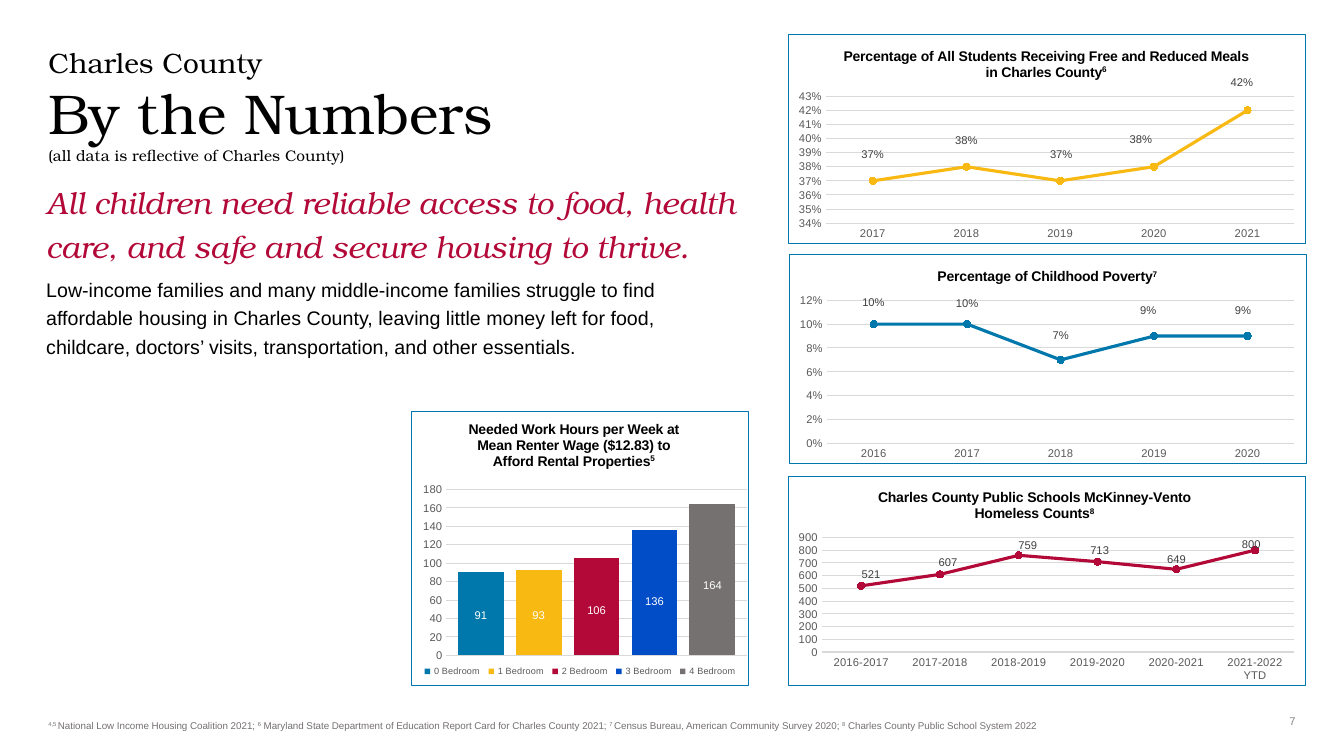
from dataclasses import dataclass

from lxml import etree
from pptx import Presentation
from pptx.chart.data import CategoryChartData
from pptx.dml.color import RGBColor
from pptx.enum.chart import (XL_CHART_TYPE, XL_LEGEND_POSITION, XL_MARKER_STYLE,
                             XL_TICK_MARK)
from pptx.enum.text import MSO_ANCHOR, MSO_AUTO_SIZE, PP_ALIGN
from pptx.oxml import parse_xml
from pptx.oxml.ns import nsdecls, qn
from pptx.util import Inches, Pt

COLUMNS, LINES = XL_CHART_TYPE.COLUMN_CLUSTERED, XL_CHART_TYPE.LINE_MARKERS
LEFT, CENTER, RIGHT = PP_ALIGN.LEFT, PP_ALIGN.CENTER, PP_ALIGN.RIGHT
TOP, MIDDLE = MSO_ANCHOR.TOP, MSO_ANCHOR.MIDDLE
NO_TICKS = XL_TICK_MARK.NONE


@dataclass(frozen=True)
class Theme:
    serif: str = "TeX Gyre Bonum"
    sans: str = "Arial"
    black: str = "000000"
    white: str = "FFFFFF"
    blue: str = "0178AC"
    gold: str = "F9B913"
    red: str = "B30939"
    royal: str = "004DC7"
    gray: str = "767171"
    source: str = "757070"
    number: str = "888888"
    axis: str = "595959"
    label: str = "3F3F3F"
    grid: str = "D9D9D9"
    heading: float = 40
    county: float = 20
    remark: float = 11
    claim: float = 22
    body: float = 14
    chart_title: float = 10
    small: float = 8
    footnote: float = 7
    legend: float = 6.5


THEME = Theme()
SUPER = {"raised": True}

# A paragraph is a list of (text, format) spans; "\n" breaks the line.
TITLE = [[("Charles County\n", {"size": THEME.county}),
          ("By the Numbers\n", {"size": THEME.heading}),
          ("(all data is reflective of Charles County)", {"size": THEME.remark})]]
MESSAGE = [
    [("All children need reliable access to food, health care, and safe and secure "
      "housing to thrive.", {"size": THEME.claim, "font": THEME.serif,
                             "color": THEME.red, "italic": True})],
    [("Low-income families and many middle-income families struggle to find affordable "
      "housing in Charles County, leaving little money left for food, childcare, "
      "doctors’ visits, transportation, and other essentials.", {"size": THEME.body})],
]
SOURCES = [[("4,5 ", SUPER), ("National Low Income Housing Coalition 2021; ", {}),
            ("6", SUPER),
            (" Maryland State Department of Education Report Card for Charles County 2021; ", {}),
            ("7 ", SUPER), ("Census Bureau, American Community Survey 2020; ", {}),
            ("8", SUPER), (" Charles County Public School System 2022", {})]]

BEDROOMS = [("0 Bedroom", 91, THEME.blue), ("1 Bedroom", 93, THEME.gold),
            ("2 Bedroom", 106, THEME.red), ("3 Bedroom", 136, THEME.royal),
            ("4 Bedroom", 164, THEME.gray)]
BAR_GAP, BAR_OVERLAP = 52, -27
LEGEND_AREA = (0.02, 0.91, 0.96, 0.08)

# plot and title_at are shares of the chart; nudges are inches from the marked value.
WORK_HOURS = dict(
    at=(4.08, 4.08, 3.35, 2.72), plot=(0.103, 0.285, 0.891, 0.607), title_at=(0.16, 0.02),
    title=["Needed Work Hours per Week at", "Mean Renter Wage ($12.83) to",
           "Afford Rental Properties"], note="5",
    scale=(0, 180, 20), format="General",
    nudges=[(0, 0.01), (0, 0.02), (0, 0.03), (0, 0.08), (0, 0.05)])
MEALS = dict(
    at=(7.82, 0.34, 5.13, 2.08), plot=(0.072, 0.295, 0.907, 0.608), title_at=(0.1, 0.044),
    title=["Percentage of All Students Receiving Free and Reduced Meals",
           "in Charles County"], note="6",
    scale=(0.34, 0.43, 0.01), format="0%", color=THEME.gold,
    years=["2017", "2018", "2019", "2020", "2021"], values=[0.37, 0.38, 0.37, 0.38, 0.42],
    labels=["37%", "38%", "37%", "38%", "42%"],
    nudges=[(0, -0.27), (0, -0.27), (0.01, -0.27), (-0.13, -0.28), (-0.06, -0.28)])
POVERTY = dict(
    at=(7.83, 2.52, 5.13, 2.08), plot=(0.072, 0.22, 0.905, 0.685), title_at=(0.28, 0.046),
    title=["Percentage of Childhood Poverty"], note="7",
    scale=(0, 0.12, 0.02), format="0%", color=THEME.blue,
    years=["2016", "2017", "2018", "2019", "2020"], values=[0.1, 0.1, 0.07, 0.09, 0.09],
    labels=["10%", "10%", "7%", "9%", "9%"],
    nudges=[(0, -0.22), (0, -0.21), (0, -0.25), (-0.06, -0.26), (-0.05, -0.26)])
HOMELESS = dict(
    at=(7.82, 4.72, 5.13, 2.08), plot=(0.064, 0.294, 0.915, 0.548), title_at=(0.167, 0.042),
    title=["Charles County Public Schools McKinney-Vento", "Homeless Counts"], note="8",
    scale=(0, 900, 100), format="General", color=THEME.red,
    years=["2016-2017", "2017-2018", "2018-2019", "2019-2020", "2020-2021", "2021-2022 YTD"],
    values=[520, 610, 760, 710, 650, 800],
    labels=["521", "607", "759", "713", "649", "800"],
    nudges=[(0.1, -0.12), (0.08, -0.12), (0.09, -0.1), (0.02, -0.12), (0, -0.1), (-0.04, -0.06)])


def rgb(color):
    return RGBColor.from_string(color)


def style_font(font, size=THEME.small, color=THEME.black, name=THEME.sans, bold=False, italic=False):
    font.size, font.name, font.bold, font.italic = Pt(size), name, bold, italic
    font.color.rgb = rgb(color)


def write_text(frame, paragraphs, size=THEME.small, color=THEME.black, font=THEME.sans,
               bold=False, align=LEFT, line_spacing=None, space_before=0):
    for index, spans in enumerate(paragraphs):
        para = frame.add_paragraph() if index else frame.paragraphs[0]
        para.alignment = align
        if line_spacing:
            para.line_spacing = line_spacing
        if index and space_before:
            para.space_before = Pt(space_before)
        for text, look in spans:
            span = para.add_run()
            span.text = text.rstrip("\n")
            style_font(span.font, look.get("size", size), look.get("color", color),
                       look.get("font", font), bold, look.get("italic", False))
            if look.get("raised"):
                span.font._element.set("baseline", "30000")
            if text.endswith("\n"):
                para.add_line_break()


def set_frame(frame, margins=(0.1, 0.05, 0.1, 0.05), anchor=TOP):
    frame.word_wrap, frame.auto_size = True, MSO_AUTO_SIZE.NONE
    frame.vertical_anchor = anchor
    (frame.margin_left, frame.margin_top,
     frame.margin_right, frame.margin_bottom) = map(Inches, margins)


def add_text(page, at, paragraphs, margins=(0.1, 0.05, 0.1, 0.05), anchor=TOP, **look):
    box = page.shapes.add_textbox(*map(Inches, at))
    set_frame(box.text_frame, margins, anchor)
    write_text(box.text_frame, paragraphs, **look)


def place_part(part, position, shares, **target):
    """Give a chart part a manual layout, in shares from the chart's top left corner."""
    for old in part.findall(qn("c:layout")):
        part.remove(old)
    layout = parse_xml(f"<c:layout {nsdecls('c')}><c:manualLayout/></c:layout>")
    settings = {**target, "xMode": "edge", "yMode": "edge", **dict(zip("xywh", shares))}
    for tag, value in settings.items():
        etree.SubElement(layout[0], qn(f"c:{tag}")).set("val", str(value))
    part.insert(position, layout)


def add_panel(page, kind, data, panel):
    """Add a framed chart with its title, scale and plot area."""
    chart = page.shapes.add_chart(kind, *map(Inches, panel["at"]), data).chart
    style_font(chart.font, THEME.chart_title)
    chart.has_legend = False
    chart.element.find(qn("c:chart")).addnext(parse_xml(
        f'<c:spPr {nsdecls("c", "a")}><a:solidFill><a:srgbClr val="{THEME.white}"/></a:solidFill>'
        f'<a:ln w="{Pt(0.5)}"><a:solidFill><a:srgbClr val="{THEME.blue}"/></a:solidFill></a:ln>'
        '</c:spPr>'))

    lines = [[(line, {})] for line in panel["title"]]
    lines[-1].append((panel["note"], SUPER))
    write_text(chart.chart_title.text_frame, lines, size=THEME.chart_title, bold=True, align=CENTER)
    place_part(chart.chart_title.element, 1, panel["title_at"])
    place_part(chart.element.find(".//" + qn("c:plotArea")), 0, panel["plot"], layoutTarget="inner")

    scale = chart.value_axis
    scale.minimum_scale, scale.maximum_scale, scale.major_unit = panel["scale"]
    scale.tick_labels.number_format = panel["format"]
    scale.tick_labels.number_format_is_linked = False
    scale.format.line.fill.background()
    scale.has_major_gridlines = True
    for line in (scale.major_gridlines.format.line, chart.category_axis.format.line):
        line.color.rgb, line.width = rgb(THEME.grid), Pt(0.75)
    for axis in (scale, chart.category_axis):
        axis.major_tick_mark = axis.minor_tick_mark = NO_TICKS
        style_font(axis.tick_labels.font, color=THEME.axis)
    return chart


def add_labels(page, panel, labels, shares, levels, size, color):
    """Centre each label on its place in the plot, then nudge it."""
    left, top, width, height = panel["at"]
    x, y, w, h = panel["plot"]
    low, high, _ = panel["scale"]
    for text, share, level, (dx, dy) in zip(labels, shares, levels, panel["nudges"]):
        center = left + width * (x + w * share) + dx
        middle = top + height * (y + h * (high - level) / (high - low)) + dy
        add_text(page, (center - size[0] / 2, middle - size[1] / 2, *size), [[(text, {})]],
                 margins=(0, 0, 0, 0), anchor=MIDDLE, color=color, align=CENTER)


def add_bars(page, panel):
    data = CategoryChartData()
    data.categories = ["1"]
    for name, hours, _ in BEDROOMS:
        data.add_series(name, [hours])
    chart = add_panel(page, COLUMNS, data, panel)
    chart.category_axis.visible = False
    plot = chart.plots[0]
    plot.gap_width, plot.overlap, plot.vary_by_categories = BAR_GAP, BAR_OVERLAP, False
    for series, (_, _, color) in zip(plot.series, BEDROOMS):
        series.invert_if_negative = False
        series.format.fill.solid()
        series.format.fill.fore_color.rgb = rgb(color)
    chart.has_legend = True
    chart.legend.position = XL_LEGEND_POSITION.BOTTOM
    chart.legend.include_in_layout = False
    style_font(chart.legend.font, THEME.legend, THEME.axis)
    place_part(chart.element.find(".//" + qn("c:legend")), 1, LEGEND_AREA)

    count, gap, step = len(BEDROOMS), BAR_GAP / 100, 1 - BAR_OVERLAP / 100
    total = 1 + (count - 1) * step + gap
    shares = [(gap / 2 + 0.5 + index * step) / total for index in range(count)]
    hours = [row[1] for row in BEDROOMS]
    add_labels(page, panel, map(str, hours), shares, [value / 2 for value in hours],
               (0.44, 0.35), THEME.white)


def add_trend(page, panel):
    values, color = panel["values"], rgb(panel["color"])
    data = CategoryChartData(number_format=panel["format"])
    data.categories = panel["years"]
    data.add_series("Series 1", values)
    plot = add_panel(page, LINES, data, panel).plots[0]
    plot.vary_by_categories = False
    series = plot.series[0]
    series.smooth = False
    series.format.line.color.rgb, series.format.line.width = color, Pt(2.25)
    series.marker.style, series.marker.size = XL_MARKER_STYLE.CIRCLE, 5
    series.marker.format.fill.solid()
    series.marker.format.fill.fore_color.rgb = color
    series.marker.format.line.color.rgb = color
    shares = [(index + 0.5) / len(values) for index in range(len(values))]
    add_labels(page, panel, panel["labels"], shares, values, (0.31, 0.13), THEME.label)


def main():
    deck = Presentation()
    deck.slide_width, deck.slide_height = Inches(13.33), Inches(7.5)
    page = deck.slides.add_slide(deck.slide_layouts[5])
    title = page.shapes.title
    title.left, title.top, title.width, title.height = map(Inches, (0.38, 0.4, 12.57, 0.94))
    set_frame(title.text_frame)
    write_text(title.text_frame, TITLE, font=THEME.serif)
    add_text(page, (0.36, 1.7, 7.11, 2.21), MESSAGE, line_spacing=1.2, space_before=6)
    add_text(page, (9.95, 6.95, 3, 0.4), [[("7", {})]], anchor=MIDDLE, color=THEME.number, align=RIGHT)
    add_bars(page, WORK_HOURS)
    for panel in (HOMELESS, MEALS, POVERTY):
        add_trend(page, panel)
    add_text(page, (0.48, 7.09, 10.68, 0.22), SOURCES, margins=(0, 0.05, 0.1, 0.05),
             size=THEME.footnote, color=THEME.source)
    deck.save("out.pptx")


if __name__ == "__main__":
    main()
